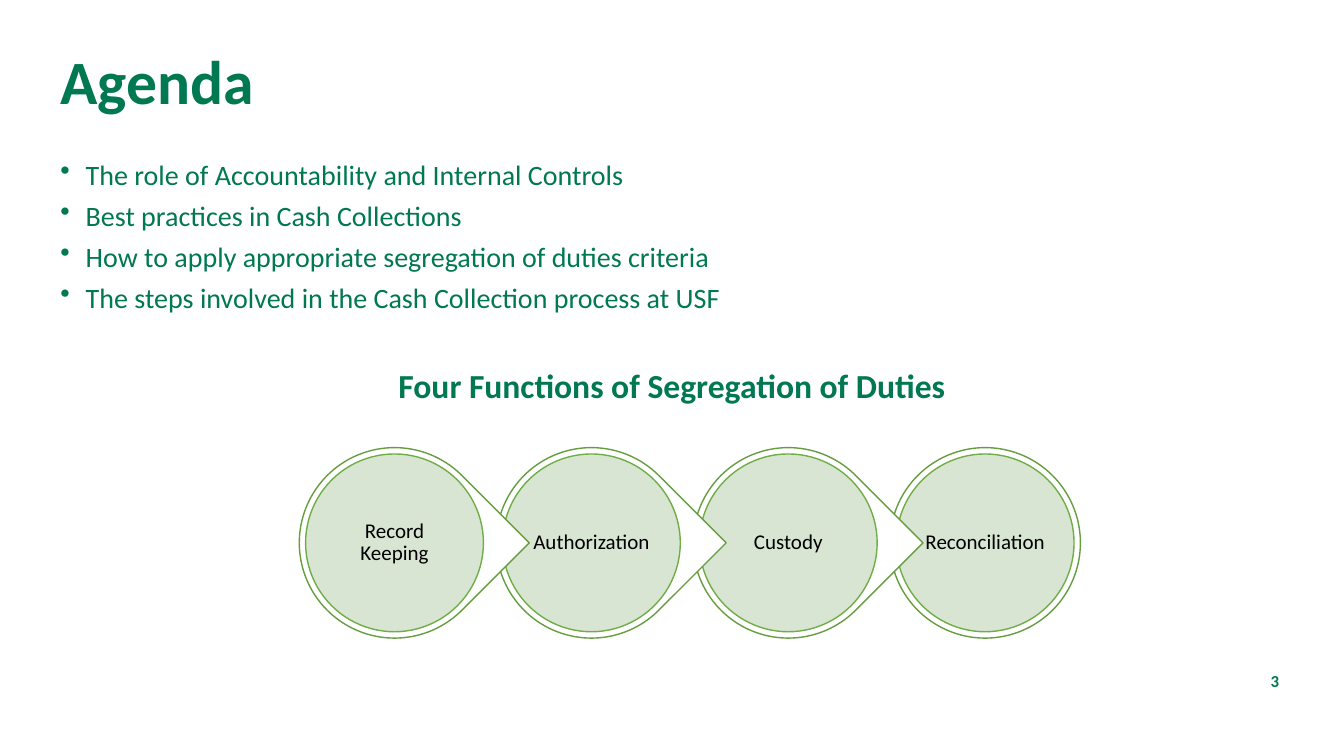
import pptx
import pptx.util
import pptx.dml.color
import pptx.enum.shapes
import pptx.enum.text
import pptx.oxml
import pptx.oxml.ns

Cm, Pt = pptx.util.Cm, pptx.util.Pt
SHAPE = pptx.enum.shapes.MSO_SHAPE
ALIGN = pptx.enum.text.PP_ALIGN
ANCHOR = pptx.enum.text.MSO_ANCHOR
qn = pptx.oxml.ns.qn

HUES = {"green": "007851", "ring": "669D40", "edge": "70AD47",
        "disc": "D5E3CF", "white": "FFFFFF", "black": "000000"}
GOALS = ["The role of Accountability and Internal Controls",
         "Best practices in Cash Collections",
         "How to apply appropriate segregation of duties criteria",
         "The steps involved in the Cash Collection process at USF"]
DUTIES = ["Record Keeping", "Authorization", "Custody", "Reconciliation"]


class Page:
    """Holds the style and the current slide."""

    def __init__(self, deck, font="Calibri"):
        self.slide = deck.slides.add_slide(deck.slide_layouts[5])
        self.font = font

    def hue(self, name):
        return pptx.dml.color.RGBColor.from_string(HUES[name])

    def fill_text(self, frame, lines, size, hue="green", bold=False,
                  align=ALIGN.LEFT, anchor=ANCHOR.TOP, lead=0.9,
                  gap=0, bullet=False):
        frame.word_wrap = True
        frame.auto_size = pptx.enum.text.MSO_AUTO_SIZE.NONE
        frame.vertical_anchor = anchor
        for i, line in enumerate(lines):
            para = frame.add_paragraph() if i else frame.paragraphs[0]
            para.text = line
            para.alignment = align
            para.line_spacing = lead
            para.space_before = Pt(gap if i else 0)
            if bullet:
                props = para._p.get_or_add_pPr()
                props.set("marL", str(Cm(0.64)))
                props.set("indent", str(-Cm(0.64)))
                mark = pptx.oxml.parse_xml(
                    '<a:buChar %s char="•"/>' % pptx.oxml.ns.nsdecls("a"))
                props.append(mark)
            para.font.name = self.font
            para.font.size = Pt(size)
            para.font.bold = bold
            para.font.color.rgb = self.hue(hue)

    def title(self, text, x, y, w, h):
        box = self.slide.shapes.title
        box.left, box.top, box.width, box.height = Cm(x), Cm(y), Cm(w), Cm(h)
        self.fill_text(box.text_frame, [text], 44, bold=True)

    def text(self, lines, x, y, w, h, size, inset=None, **style):
        box = self.slide.shapes.add_textbox(Cm(x), Cm(y), Cm(w), Cm(h))
        frame = box.text_frame
        if inset is not None:
            frame.margin_left = frame.margin_right = Cm(inset)
            frame.margin_top = frame.margin_bottom = Cm(inset)
        self.fill_text(frame, lines, size, **style)

    def shape(self, kind, x, y, side, fill, line, turn=0, alpha=None):
        item = self.slide.shapes.add_shape(
            kind, Cm(x), Cm(y), Cm(side), Cm(side))
        item.shadow.inherit = False
        item.rotation = turn
        item.fill.solid()
        item.fill.fore_color.rgb = self.hue(fill)
        item.line.color.rgb = self.hue(line)
        item.line.width = Pt(1)
        if alpha:
            tint = item._element.spPr.find(
                qn("a:solidFill")).find(qn("a:srgbClr"))
            tint.append(tint.makeelement(
                qn("a:alpha"), {"val": str(alpha * 1000)}))

    def duty(self, name, mid, last):
        # Ring, disc and label share one centre
        high, ring, disc, label = 13.68, 4.8, 4.48, 3.2
        self.shape(SHAPE.OVAL if last else SHAPE.TEAR, mid - ring / 2,
                   high - ring / 2, ring, "white", "ring",
                   turn=0 if last else 45)
        self.shape(SHAPE.OVAL, mid - disc / 2, high - disc / 2, disc,
                   "disc", "edge", alpha=90)
        self.text([name], mid - label / 2, high - label / 2, label, label,
                  15, inset=0.05, hue="black", align=ALIGN.CENTER,
                  anchor=ANCHOR.MIDDLE)


def main():
    deck = pptx.Presentation()
    deck.slide_width, deck.slide_height = Cm(33.86), Cm(19.05)
    page = Page(deck)

    # Title and agenda
    page.title("Agenda", 1.27, 1.17, 31.22, 2.16)
    page.text(GOALS, 1.27, 4.01, 30.48, 4.45, 20, lead=0.8, gap=10,
              bullet=True)

    # Page number
    page.text(["3"], 30.12, 16.79, 2.36, 0.74, 12, bold=True, lead=1,
              align=ALIGN.RIGHT, anchor=ANCHOR.MIDDLE)

    # Chain of duties, drawn from right to left so each tip overlaps
    page.text(["Four Functions of Segregation of Duties"], 9.27, 9.19,
              15.32, 1.4, 24, bold=True, align=ALIGN.CENTER)
    end = len(DUTIES) - 1
    for i in range(end, -1, -1):
        page.duty(DUTIES[i], 9.94 + 4.96 * i, i == end)

    deck.save("out.pptx")


if __name__ == "__main__":
    main()
